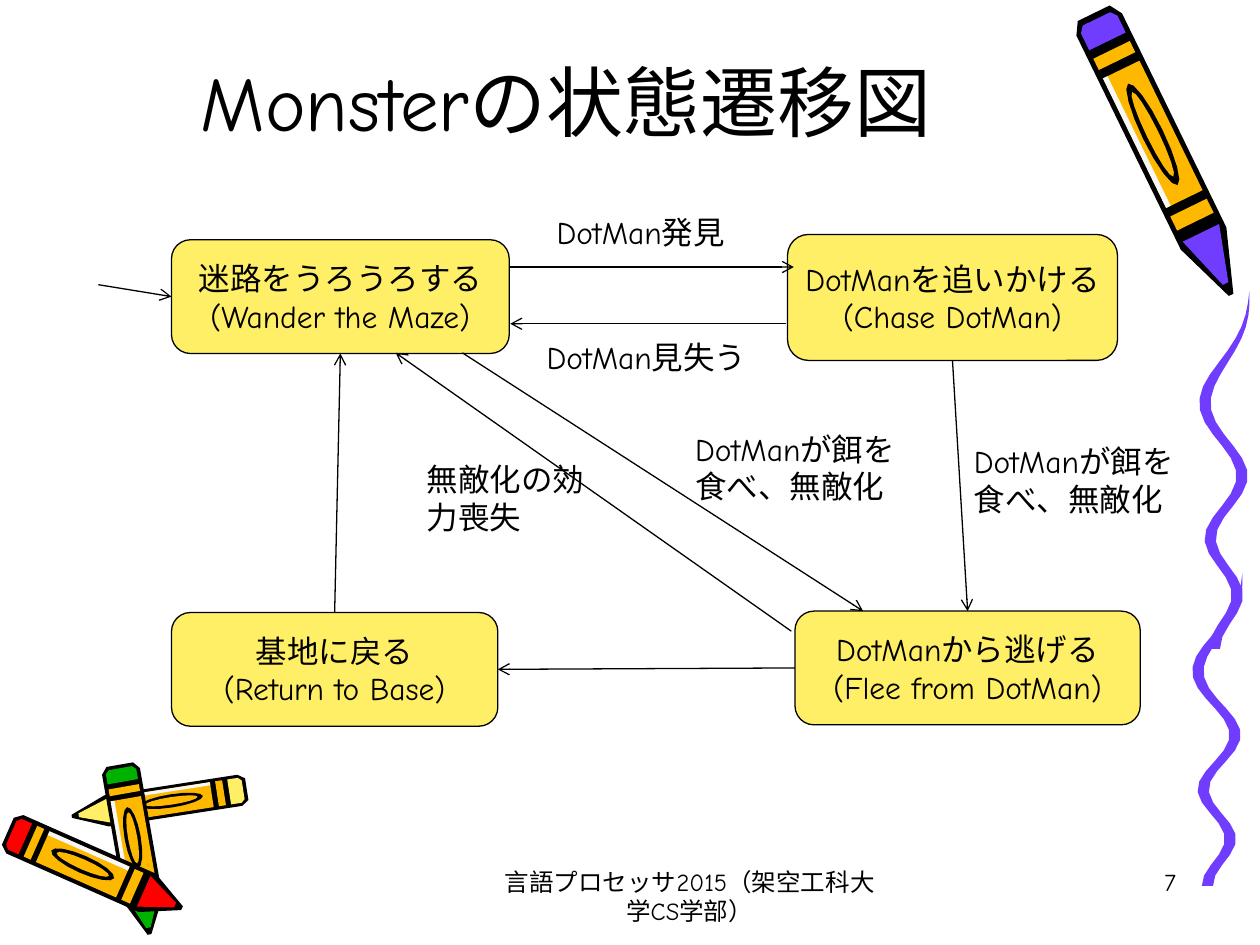
from math import cos, hypot, pi, sin

from lxml import etree
from pptx import Presentation
from pptx.dml.color import RGBColor
from pptx.enum.shapes import MSO_CONNECTOR as Connector, MSO_SHAPE as Shape
from pptx.enum.text import MSO_ANCHOR as Anchor, PP_ALIGN as Align
from pptx.oxml.ns import qn
from pptx.util import Pt

FONT = "Comic Neue"
COLORS = {
    "black": "000000", "white": "F8F8F8", "purple": "703DFF", "orange": "FFB800",
    "yellow": "FFEF66", "red": "FF0000", "green": "00B200",
}
COLORS = {name: RGBColor.from_string(value) for name, value in COLORS.items()}
TOP, LEFT, BOTTOM, RIGHT = range(4)  # connection sites of a box


def write(frame, lines, size, align=Align.LEFT, wrap=True):
    """Fill a text frame with one paragraph for each line."""
    frame.word_wrap = wrap
    for index, line in enumerate(lines):
        paragraph = frame.add_paragraph() if index else frame.paragraphs[0]
        paragraph.alignment = align
        run = paragraph.add_run()
        run.text = line
        run.font.size = Pt(size)
        run.font.name = FONT
        run.font.color.rgb = COLORS["black"]


def draw_outline(shapes, points, color):
    """Draw a closed, filled polygon through points given in points."""
    corners = [(Pt(x), Pt(y)) for x, y in points]
    builder = shapes.build_freeform(*corners[0])
    builder.add_line_segments(corners[1:], close=True)
    shape = builder.convert_to_shape()
    shape.shadow.inherit = False
    shape.fill.solid()
    shape.fill.fore_color.rgb = COLORS[color]
    shape.line.fill.background()


presentation = Presentation()
presentation.slide_width, presentation.slide_height = Pt(720), Pt(540)
slide = presentation.slides.add_slide(presentation.slide_layouts[6])

# One crayon in its own units: along runs 0 (blunt end) to 1 (tip), across -1 to 1.
# Each part is a half profile, mirrored about the axis; the black body shows in the gaps.
profiles = [
    ("black", [(0, 0.7), (0.04, 1), (0.8, 1), (1, 0.1)]),
    ("accent", [(0.02, 0.6), (0.04, 0.8), (0.1, 0.8)]),
    ("orange", [(0.13, 0.8), (0.17, 0.8)]),
    ("orange", [(0.2, 0.8), (0.66, 0.8)]),
    ("orange", [(0.69, 0.8), (0.74, 0.8)]),
    ("accent", [(0.78, 0.8), (0.96, 0.12)]),
]
crayon_parts = [
    (color, half + [(along, -across) for along, across in reversed(half)])
    for color, half in profiles
]
crayon_parts.append(("white", [(0.2, 0.6), (0.66, 0.6), (0.66, 0.8), (0.2, 0.8)]))
for color, length, breadth in (("black", 0.18, 0.42), ("orange", 0.15, 0.24)):
    angles = [2 * pi * step / 16 for step in range(16)]
    label = [(0.43 + length * cos(angle), breadth * sin(angle)) for angle in angles]
    crayon_parts.append((color, label))

# Crayons, back to front: blunt end, tip, half width (negative flips the gleam), accent
crayons = [
    ((141, 451), (41, 466.5), 9, "yellow"),
    ((68.5, 437), (85.5, 534), 11, "green"),
    ((4.5, 475), (104, 519), -12, "red"),
    ((625, 7.6), (703.5, 168.5), 14.5, "purple"),
]
for (end_x, end_y), (tip_x, tip_y), half_width, accent in crayons:
    axis_x, axis_y = tip_x - end_x, tip_y - end_y
    ratio = half_width / hypot(axis_x, axis_y)
    group = slide.shapes.add_group_shape()
    for color, part in crayon_parts:
        points = [
            (end_x + along * axis_x - across * ratio * axis_y,
             end_y + along * axis_y + across * ratio * axis_x)
            for along, across in part
        ]
        draw_outline(group.shapes, points, accent if color == "accent" else color)

# Crayon stroke: two waving ribbons that start as a point and swing less as they fall
group = slide.shapes.add_group_shape()
for middle, top, height in ((696, 327.6, 178.6), (700, 166.3, 204.5)):
    right_edge, left_edge = [], []
    for step in range(31):
        progress = step / 30
        swing = 14 - 8 * progress
        x = middle + swing * cos(5 * pi * progress ** 1.4)
        y = top + height * progress
        half_width = 3.2 * min(1, 4 * progress)
        right_edge.append((x + half_width, y))
        left_edge.append((x - half_width, y))
    draw_outline(group.shapes, right_edge + left_edge[::-1], "purple")

# State boxes
states = {
    "wander": ((98, 137, 193, 65), ["迷路をうろうろする", "(Wander the Maze)"]),
    "chase": ((450, 134, 188.6, 72), ["DotManを追いかける", "(Chase DotMan)"]),
    "base": ((98, 350, 186.5, 65), ["基地に戻る", "(Return to Base)"]),
    "flee": ((454.3, 349.2, 197.3, 65), ["DotManから逃げる", "(Flee from DotMan)"]),
}
boxes = {}
for name, (place, lines) in states.items():
    box = slide.shapes.add_shape(Shape.ROUNDED_RECTANGLE, *map(Pt, place))
    box.shadow.inherit = False
    box.fill.solid()
    box.fill.fore_color.rgb = COLORS["yellow"]
    box.line.color.rgb = COLORS["black"]
    box.line.width = Pt(0.75)
    box.text_frame.vertical_anchor = Anchor.MIDDLE
    write(box.text_frame, lines, 18, Align.CENTER, wrap=name != "chase")
    boxes[name] = box

# Transitions: each end is a free point or a box with the side it joins
transitions = [
    ((56.2, 162.7), ("wander", LEFT)),
    ((291.6, 152.6), (453.6, 152.6)),
    ((449.3, 185), (291.6, 185)),
    (("base", TOP), ("wander", BOTTOM)),
    (("flee", LEFT), ("base", RIGHT)),
    (("chase", BOTTOM), ("flee", TOP)),
    ((264.2, 201.6), (493.2, 349.2)),
    ((452.2, 360.7), (226.1, 201.6)),
]
for start, end in transitions:
    start_joins, end_joins = start[0] in boxes, end[0] in boxes
    start_point = (0, 0) if start_joins else start
    end_point = (0, 0) if end_joins else end
    arrow = slide.shapes.add_connector(Connector.STRAIGHT, *map(Pt, start_point + end_point))
    if start_joins:
        arrow.begin_connect(boxes[start[0]], start[1])
    if end_joins:
        arrow.end_connect(boxes[end[0]], end[1])
    arrow.line.color.rgb = COLORS["black"]
    arrow.line.width = Pt(0.75)
    etree.SubElement(arrow.line._get_or_add_ln(), qn("a:tailEnd"), type="arrow")
    etree.SubElement(arrow._element.spPr, qn("a:effectLst"))

# Title, transition labels, footer and slide number
texts = [
    ((53.3, 25.2, 540.7, 62), "Monsterの状態遷移図", 44, Align.CENTER, Anchor.BOTTOM),
    ((280, 491.8, 228.2, 36), "言語プロセッサ2015（架空工科大学CS学部）", 14, Align.CENTER, Anchor.TOP),
    ((529.2, 491.8, 149.8, 36), "7", 14, Align.RIGHT, Anchor.TOP),
]
labels = [
    ((311, 118, 133, 29), "DotMan発見"),
    ((305.3, 189.4, 135.4, 29), "DotMan見失う"),
    ((549.4, 249, 132.5, 51), "DotManが餌を食べ、無敵化"),
    ((390.2, 242, 132.5, 51), "DotManが餌を食べ、無敵化"),
    ((236.9, 259.2, 106.6, 51), "無敵化の効力喪失"),
]
texts += [(place, text, 18, Align.LEFT, Anchor.TOP) for place, text in labels]
for place, text, size, align, anchor in texts:
    frame = slide.shapes.add_textbox(*map(Pt, place)).text_frame
    frame.vertical_anchor = anchor
    write(frame, [text], size, align)

presentation.save("out.pptx")
